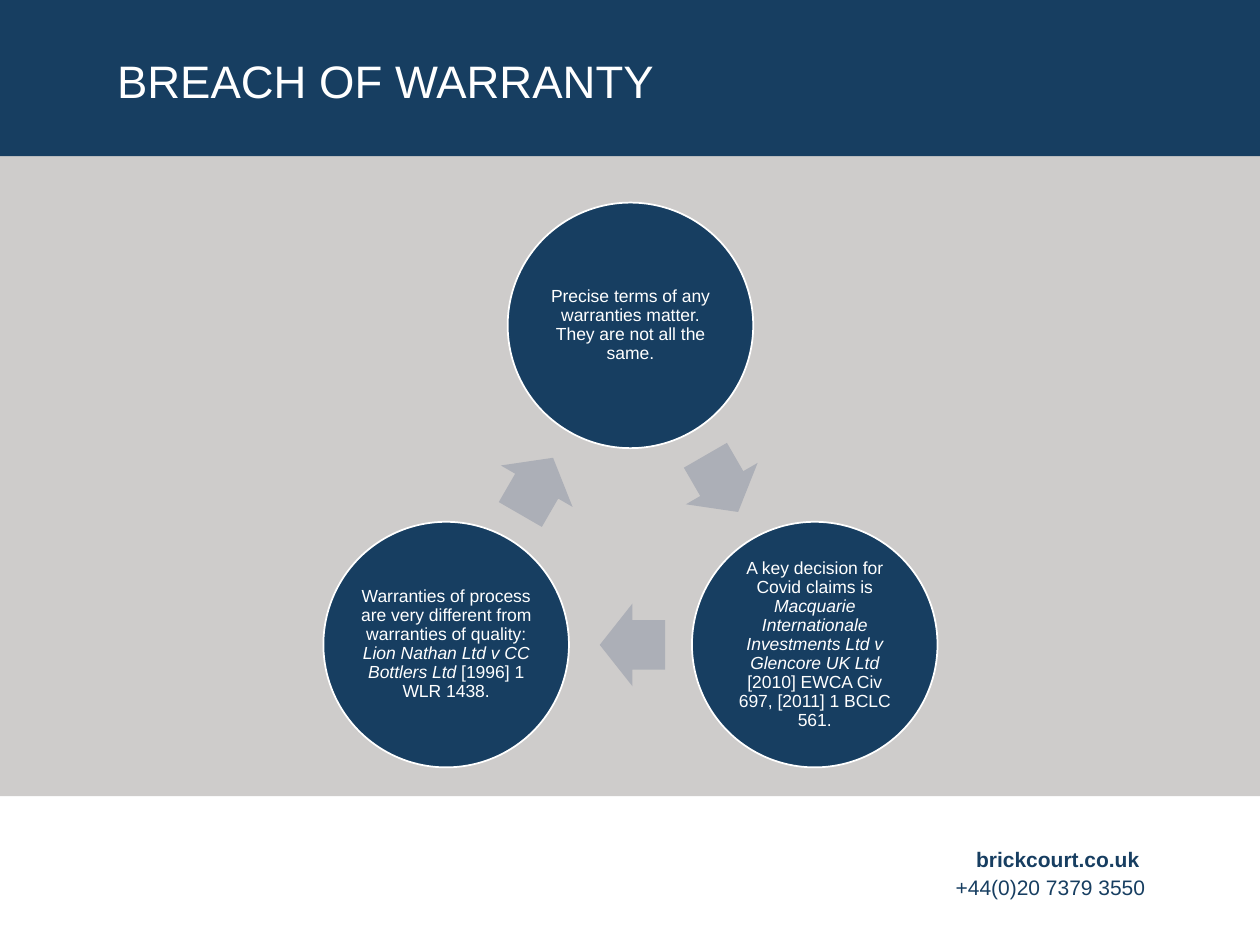
import math

from pptx import Presentation
from pptx import util as u
from pptx.dml.color import RGBColor
from pptx.enum import shapes, text

NAVY = RGBColor(0x17, 0x3E, 0x61)
STONE = RGBColor(0xCE, 0xCC, 0xCB)
ARROW_GREY = RGBColor(0xAC, 0xAF, 0xB7)
WHITE = RGBColor(0xFF, 0xFF, 0xFF)

presentation = Presentation()
presentation.slide_width, presentation.slide_height = u.Cm(25.4), u.Cm(19.05)
slide = presentation.slides.add_slide(presentation.slide_layouts[6])


def add_filled(kind, left, top, width, height, color, outline=None):
    shape = slide.shapes.add_shape(kind, *map(u.Cm, (left, top, width, height)))
    shape.shadow.inherit = False
    shape.fill.solid()
    shape.fill.fore_color.rgb = color
    if outline is None:
        shape.line.fill.background()
    else:
        shape.line.color.rgb = outline
        shape.line.width = u.Pt(1)
    return shape


def add_text(left, top, width, height, lines, inset, size, color, paragraph_format):
    """Each line is a list of (wording, font values) runs."""
    box = slide.shapes.add_textbox(*map(u.Cm, (left, top, width, height)))
    frame = box.text_frame
    frame.word_wrap = True
    frame.vertical_anchor = text.MSO_ANCHOR.MIDDLE
    for side in ("left", "top", "right", "bottom"):
        setattr(frame, f"margin_{side}", u.Cm(inset))
    for index, runs in enumerate(lines):
        paragraph = frame.add_paragraph() if index else frame.paragraphs[0]
        for name, value in paragraph_format.items():
            setattr(paragraph, name, value)
        for wording, extra in runs:
            run = paragraph.add_run()
            run.text = wording
            run.font.color.rgb = color
            for name, value in {"name": "Arial", "size": u.Pt(size), **extra}.items():
                setattr(run.font, name, value)


# Background bands
add_filled(shapes.MSO_SHAPE.RECTANGLE, 0, 3.15, 25.4, 12.9, STONE)
add_filled(shapes.MSO_SHAPE.RECTANGLE, 0, 0, 25.4, 3.15, NAVY)

# Contact details
add_text(14.76, 17.07, 8.58, 1.02,
         [[("brickcourt.co.uk ", {"bold": True})], [("+44(0)20 7379 3550", {})]],
         0.25, 12, NAVY,
         {"alignment": text.PP_ALIGN.RIGHT, "line_spacing": u.Pt(16)})

# Title
add_text(2.36, 1.02, 20.65, 1.35, [[("BREACH OF WARRANTY", {})]],
         0, 26, WHITE, {"line_spacing": 0.9})

# Cycle: circles spaced evenly around a centre, clockwise from the top
ITALIC = {"italic": True}
points = [
    [("Precise terms of any warranties matter. They are not all the same.", {})],
    [("A key decision for Covid claims is ", {}),
     ("Macquarie Internationale Investments Ltd v Glencore UK Ltd", ITALIC),
     (" [2010] EWCA Civ 697, [2011] 1 BCLC 561.", {})],
    [("Warranties of process are very different from warranties of quality: ", {}),
     ("Lion Nathan Ltd v CC Bottlers Ltd ", ITALIC),
     ("[1996] 1 WLR 1438.", {})],
]
CENTER_X, CENTER_Y, RADIUS = 12.71, 10.85, 4.29
CIRCLE, TEXT_SIDE = 4.95, 3.51
for index, runs in enumerate(points):
    angle = math.radians(120 * index - 90)
    x = CENTER_X + RADIUS * math.cos(angle)
    y = CENTER_Y + RADIUS * math.sin(angle)
    add_filled(shapes.MSO_SHAPE.OVAL, x - CIRCLE / 2, y - CIRCLE / 2,
               CIRCLE, CIRCLE, NAVY, WHITE)
    add_text(x - TEXT_SIDE / 2, y - TEXT_SIDE / 2, TEXT_SIDE, TEXT_SIDE, [runs],
             0.03, 10, WHITE,
             {"alignment": text.PP_ALIGN.CENTER, "line_spacing": 0.9})

# Arrows between the circles
ARROW_WIDTH, ARROW_HEIGHT = 1.32, 1.67
for x, y, rotation in [(14.55, 9.75, 60), (12.75, 13, 180), (10.82, 9.8, 300)]:
    arrow = add_filled(shapes.MSO_SHAPE.RIGHT_ARROW, x - ARROW_WIDTH / 2,
                       y - ARROW_HEIGHT / 2, ARROW_WIDTH, ARROW_HEIGHT, ARROW_GREY)
    arrow.adjustments[0], arrow.adjustments[1] = 0.6, 0.5
    arrow.rotation = rotation

presentation.save("out.pptx")
